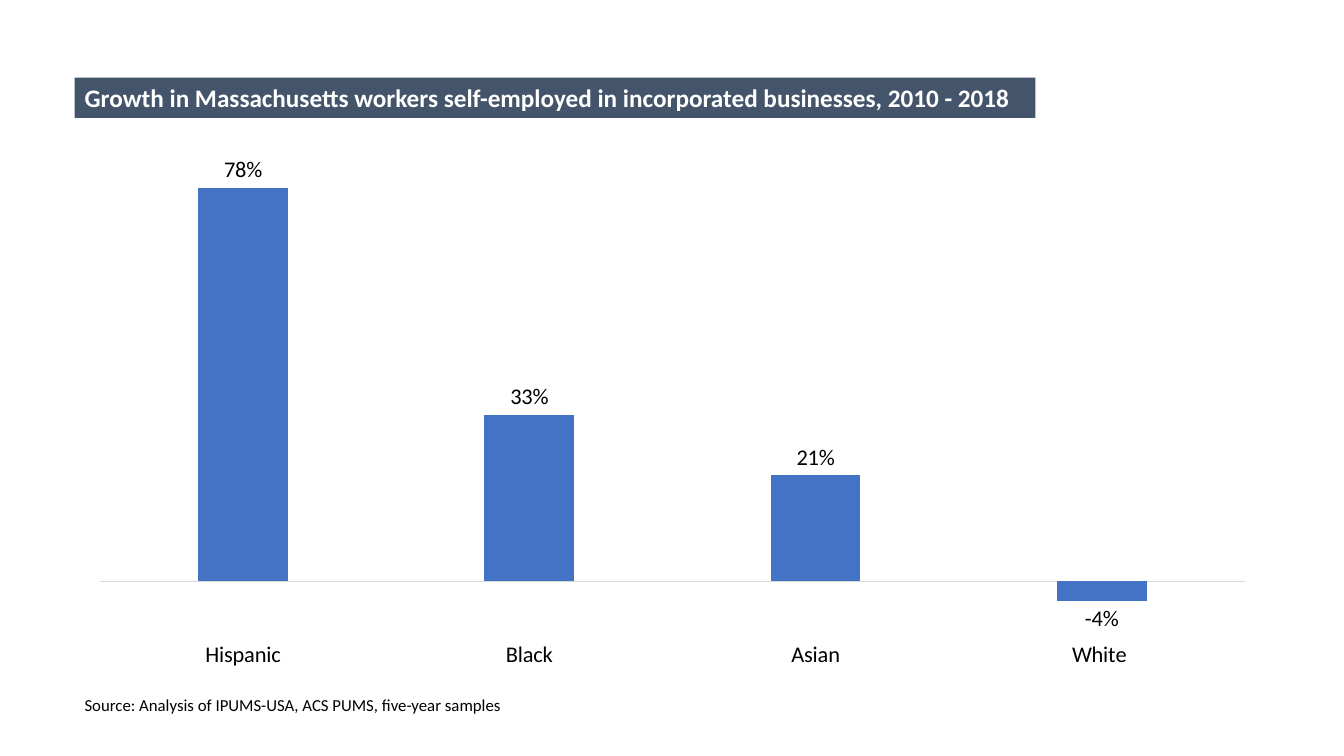
from lxml import etree
from pptx import Presentation
from pptx.chart.data import CategoryChartData as ChartData
from pptx.dml.color import RGBColor as RGB
from pptx.enum.chart import XL_CHART_TYPE as Kind, XL_LABEL_POSITION as Spot
from pptx.enum.chart import XL_TICK_LABEL_POSITION as Tick, XL_TICK_MARK as Mark
from pptx.enum.text import MSO_ANCHOR as Anchor, MSO_AUTO_SIZE as Auto, PP_ALIGN as Align
from pptx.oxml.ns import qn
from pptx.util import Inches, Pt

COLORS = {"bar": "4472C4", "band": "44546A", "line": "D9D9D9",
          "white": "FFFFFF", "black": "000000"}


def color(name):
    return RGB.from_string(COLORS[name])


def style(font, size, name, bold=False):
    for key, value in {"name": "Calibri", "size": Pt(size), "bold": bold}.items():
        setattr(font, key, value)
    font.color.rgb = color(name)


deck = Presentation()
deck.slide_width, deck.slide_height = Inches(13.33), Inches(7.5)
slide = deck.slides.add_slide(deck.slide_layouts[5])

# Title band and source line
title = slide.shapes.title
title.left, title.top = Inches(0.74), Inches(0.77)
title.width, title.height = Inches(9.53), Inches(0.4)
title.fill.solid()
title.fill.fore_color.rgb = color("band")
source = slide.shapes.add_textbox(Inches(0.74), Inches(6.84), Inches(4.4), Inches(0.3))

texts = [
    (title, "Growth in Massachusetts workers self-employed in incorporated businesses, 2010 - 2018",
     18, "white", True),
    (source, "Source: Analysis of IPUMS-USA, ACS PUMS, five-year samples", 12, "black", False),
]
for box, words, size, tint, bold in texts:
    frame = box.text_frame
    frame.text = words
    for key, value in {"word_wrap": True, "auto_size": Auto.NONE,
                       "vertical_anchor": Anchor.MIDDLE}.items():
        setattr(frame, key, value)
    frame.paragraphs[0].alignment = Align.LEFT
    style(frame.paragraphs[0].runs[0].font, size, tint, bold)

# Growth chart
data = ChartData(number_format="0%")
data.categories = ["Hispanic", "Black", "Asian", "White "]
data.add_series("Series 1", [0.78, 0.33, 0.21, -0.04])
chart = slide.shapes.add_chart(Kind.COLUMN_CLUSTERED, Inches(0.84), Inches(1.18),
                               Inches(11.66), Inches(5.66), data).chart
chart.has_title = chart.has_legend = False
style(chart.font, 10, "black")

# Columns and labels
plot = chart.plots[0]
plot.gap_width, plot.overlap, plot.vary_by_categories = 219, -27, False
bars = plot.series[0]
bars.invert_if_negative = False
bars.format.fill.solid()
bars.format.fill.fore_color.rgb = color("bar")
labels = bars.data_labels
for key, value in {"show_value": True, "number_format": "0%",
                   "number_format_is_linked": False,
                   "position": Spot.OUTSIDE_END}.items():
    setattr(labels, key, value)
style(labels.font, 16, "black")

# Axes
groups = chart.category_axis
groups.tick_label_position = Tick.LOW
groups.major_tick_mark = groups.minor_tick_mark = Mark.NONE
groups.format.line.color.rgb = color("line")
groups.format.line.width = Pt(0.75)
style(groups.tick_labels.font, 16, "black")
scale = chart.value_axis
for key, value in {"minimum_scale": -0.1, "maximum_scale": 0.9, "major_unit": 0.1,
                   "has_major_gridlines": False, "visible": False}.items():
    setattr(scale, key, value)
scale.tick_labels.number_format = "0%"
scale.tick_labels.number_format_is_linked = False

# Plot area placement
area = plot._element.getparent()
for old in area.findall(qn("c:layout")):
    area.remove(old)
layout = etree.Element(qn("c:layout"))
area.insert(0, layout)
manual = etree.SubElement(layout, qn("c:manualLayout"))
for tag, value in [("layoutTarget", "inner"), ("xMode", "edge"), ("yMode", "edge"),
                   ("x", "0.013"), ("y", "0.015"), ("w", "0.974"), ("h", "0.884")]:
    etree.SubElement(manual, qn("c:" + tag)).set("val", value)

deck.save("out.pptx")
